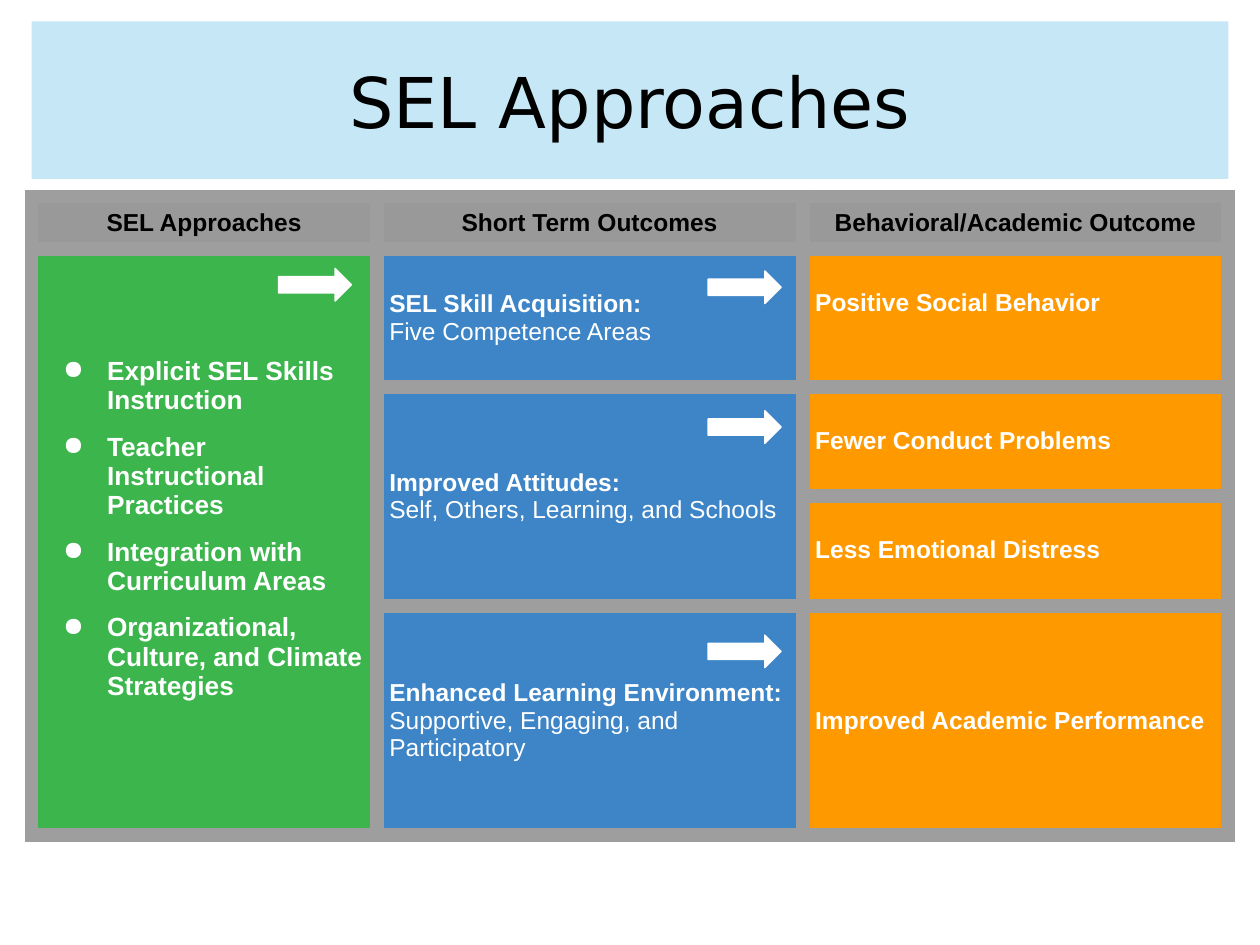
from lxml.etree import SubElement
from pptx import Presentation
from pptx.dml.color import RGBColor
from pptx.enum.shapes import MSO_SHAPE
from pptx.enum.text import MSO_ANCHOR, PP_ALIGN
from pptx.oxml import parse_xml
from pptx.oxml.ns import nsdecls, qn
from pptx.util import Inches, Pt

BLACK = RGBColor(0, 0, 0)
WHITE = RGBColor(0xFF, 0xFF, 0xFF)
SKY = RGBColor(0xA9, 0xDC, 0xF2)
GRAY = RGBColor(0x99, 0x99, 0x99)
BORDER = RGBColor(0x9E, 0x9E, 0x9E)
GREEN = RGBColor(0x3B, 0xB5, 0x4C)
BLUE = RGBColor(0x3D, 0x85, 0xC6)
ORANGE = RGBColor(0xFF, 0x99, 0x00)

LEFT, TOP = 0.25, 1.56
COLS = [2.74, 3.38, 3.38]
ROWS = [0.42, 1.09, 0.87, 0.87, 1.82]
HEADERS = ["SEL Approaches", "Short Term Outcomes", "Behavioral/Academic Outcome"]
APPROACHES = [
    "Explicit SEL Skills Instruction",
    "Teacher Instructional Practices",
    "Integration with Curriculum Areas",
    "Organizational, Culture, and Climate Strategies",
]
SHORT_TERM = {
    1: ("SEL Skill Acquisition:", "Five Competence Areas"),
    2: ("Improved Attitudes:", "Self, Others, Learning, and Schools"),
    4: ("Enhanced Learning Environment:", "Supportive, Engaging, and Participatory"),
}
OUTCOMES = [
    "Positive Social Behavior",
    "Fewer Conduct Problems",
    "Less Emotional Distress",
    "Improved Academic Performance",
]


def write(cell, lines, size=14, color=WHITE, anchor=MSO_ANCHOR.MIDDLE, top=0.1):
    """Fill a cell with one bold paragraph per line and return the paragraphs."""
    cell.vertical_anchor = anchor
    cell.margin_left = cell.margin_right = cell.margin_bottom = Inches(0.1)
    cell.margin_top = Inches(top)
    tf = cell.text_frame
    tf.text = "\n".join(lines)
    for p in tf.paragraphs:
        p.font.name, p.font.size, p.font.bold = "Arial", Pt(size), True
        p.font.color.rgb = color
    return tf.paragraphs


prs = Presentation()
prs.slide_width, prs.slide_height = Inches(10), Inches(7.5)
s = prs.slides.add_slide(prs.slide_layouts[5])

# Title band
title = s.shapes.title
title.left, title.top = Inches(LEFT), Inches(0.17)
title.width, title.height = Inches(9.5), Inches(1.25)
title.fill.solid()
title.fill.fore_color.rgb = SKY
srgb = title.fill._xPr.find(qn("a:solidFill"))[0]
SubElement(srgb, qn("a:alpha"), val="67000")
tf = title.text_frame
tf.text = "SEL Approaches"
tf.vertical_anchor = MSO_ANCHOR.MIDDLE
p = tf.paragraphs[0]
p.alignment = PP_ALIGN.CENTER
p.font.name, p.font.size, p.font.color.rgb = "DejaVu Sans", Pt(40), BLACK

# Table grid, fills and borders
table = s.shapes.add_table(len(ROWS), len(COLS), Inches(LEFT), Inches(TOP),
                           Inches(sum(COLS)), Inches(sum(ROWS))).table
for column, width in zip(table.columns, COLS):
    column.width = Inches(width)
for row, height in zip(table.rows, ROWS):
    row.height = Inches(height)
for r in range(len(ROWS)):
    for c, color in enumerate([GREEN, BLUE, ORANGE]):
        cell = table.cell(r, c)
        cell.fill.solid()
        cell.fill.fore_color.rgb = color if r else GRAY
        tcPr = cell._tc.get_or_add_tcPr()
        for i, side in enumerate(["lnL", "lnR", "lnT", "lnB"]):
            tcPr.insert(i, parse_xml(
                f'<a:{side} {nsdecls("a")} w="{Pt(9)}"><a:solidFill>'
                f'<a:srgbClr val="{BORDER}"/></a:solidFill></a:{side}>'))
table.cell(1, 0).merge(table.cell(4, 0))
table.cell(2, 1).merge(table.cell(3, 1))

# Table text
for c, header in enumerate(HEADERS):
    p = write(table.cell(0, c), [header], color=BLACK, anchor=MSO_ANCHOR.TOP)[0]
    p.alignment = PP_ALIGN.CENTER

for i, p in enumerate(write(table.cell(1, 0), APPROACHES, size=15,
                            anchor=MSO_ANCHOR.TOP, top=0.85)):
    if i:
        p.space_before = Pt(10)
    pPr = p._p.get_or_add_pPr()
    pPr.set("marL", str(Inches(0.5)))
    pPr.set("indent", str(Inches(-0.35)))
    bullet_color = parse_xml(f'<a:buClr {nsdecls("a")}><a:srgbClr val="{WHITE}"/></a:buClr>')
    bullet = parse_xml(f'<a:buChar {nsdecls("a")} char="●"/>')
    at = 1 if i else 0
    pPr.insert(at, bullet_color)
    pPr.insert(at + 1, bullet)

for r, lines in SHORT_TERM.items():
    write(table.cell(r, 1), lines)[1].font.bold = False

for r, outcome in enumerate(OUTCOMES, start=1):
    if r < 4:
        write(table.cell(r, 2), [outcome], anchor=MSO_ANCHOR.TOP, top=0.32)
    else:
        write(table.cell(r, 2), [outcome])

# Arrows leading to the next column
for left, top in [(2.21, 2.13), (5.62, 2.15), (5.62, 3.26), (5.62, 5.04)]:
    sp = s.shapes.add_shape(MSO_SHAPE.RIGHT_ARROW, Inches(left), Inches(top),
                            Inches(0.58), Inches(0.26))
    sp.shadow.inherit = False
    sp.fill.solid()
    sp.fill.fore_color.rgb = WHITE
    sp.line.color.rgb = WHITE
    sp.line.width = Pt(0.75)

prs.save("out.pptx")
